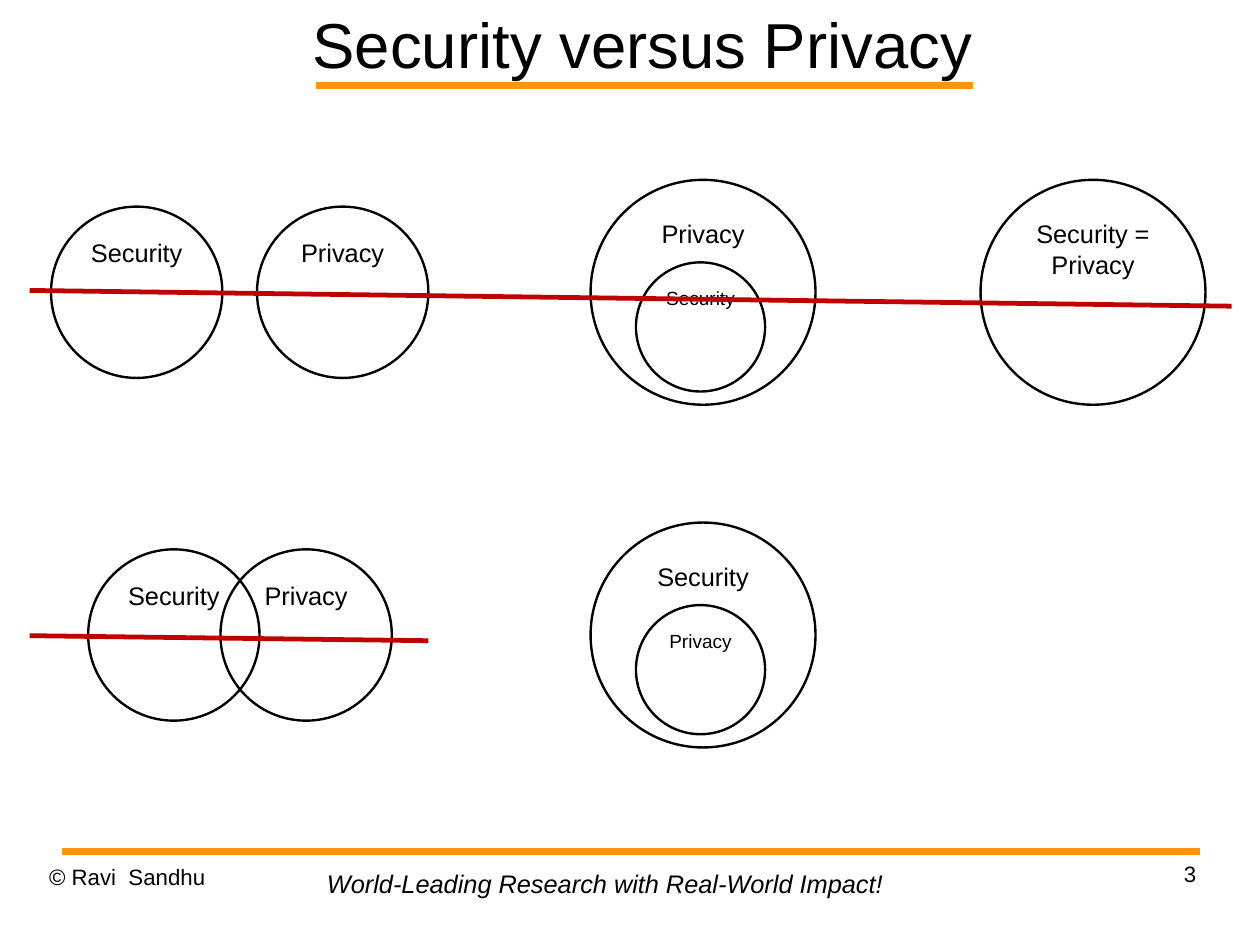
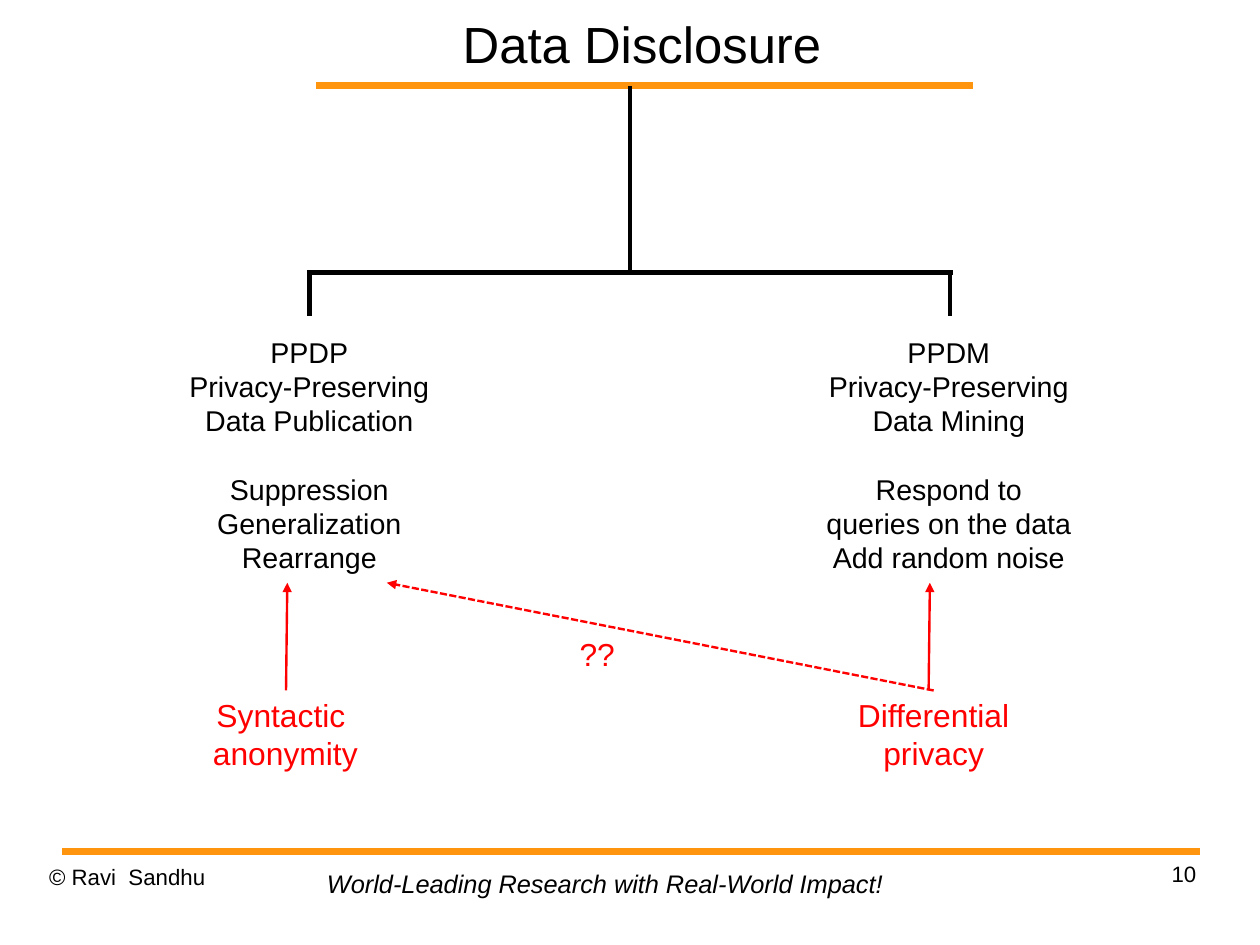
from lxml import etree
from pptx import Presentation
from pptx import util as u
from pptx.dml.color import RGBColor
from pptx.enum import dml, shapes, text
from pptx.oxml.ns import qn

WIDTH, HEIGHT = u.Cm(28), u.Cm(21)
UNIT = WIDTH / 100
BLACK, ORANGE, RED, CRIMSON = "000000", "FF950E", "FF0000", "C00000"
TITLE_RULE, FOOTER_RULE = 6.8, 67.55
SMALL, MEDIUM, LARGE = 10.25, 13.6, 17.85
LEFT, CENTER, RIGHT = text.PP_ALIGN.LEFT, text.PP_ALIGN.CENTER, text.PP_ALIGN.RIGHT
TOP, MIDDLE = text.MSO_ANCHOR.TOP, text.MSO_ANCHOR.MIDDLE


def grid(*cells):
    """Turn grid units, a hundred to the slide's width, into lengths."""
    return [u.Emu(round(cell * UNIT)) for cell in cells]


def color(value):
    """Turn a hex string into a colour."""
    return RGBColor.from_string(value)


def assign(target, values):
    """Set each named value on the target."""
    for name, value in values.items():
        setattr(target, name, value)


def write(tf, groups, size, hue=BLACK, align=CENTER, spacing=1.0, italic=False):
    """Write groups of lines, with one line's gap between groups."""
    lines = [(line, i > 0 and j == 0) for i, group in enumerate(groups)
             for j, line in enumerate(group)]
    for i, (line, gap) in enumerate(lines):
        p = tf.paragraphs[0] if i == 0 else tf.add_paragraph()
        assign(p, {"alignment": align, "line_spacing": spacing})
        if gap:
            p.space_before = u.Pt(size * 1.2)
        r = p.add_run()
        r.text = line
        assign(r.font, {"name": "Arial", "size": u.Pt(size), "italic": italic})
        r.font.color.rgb = color(hue)


def label(s, box, groups, size, anchor=TOP, **style):
    """Add a text box without margins."""
    tf = s.shapes.add_textbox(*grid(*box)).text_frame
    assign(tf, {"word_wrap": True, "vertical_anchor": anchor, "margin_left": 0,
                "margin_right": 0, "margin_top": 0, "margin_bottom": 0})
    write(tf, groups, size, **style)


def column(s, center, top, width, groups, size, hue=BLACK):
    """Add text centred on a column."""
    rows = sum(len(group) for group in groups) + len(groups) - 1
    label(s, (center - width / 2, top, width, rows * size * 0.15), groups, size, hue=hue)


def line(s, start, end, hue, width, arrow=False, dash=None):
    """Draw a straight line, with an arrowhead or dashes if asked."""
    sp = s.shapes.add_connector(shapes.MSO_CONNECTOR.STRAIGHT, *grid(*start, *end))
    sp.line.color.rgb = color(hue)
    assign(sp.line, {"width": u.Pt(width), "dash_style": dash})
    if arrow:
        etree.SubElement(sp.line._get_or_add_ln(), qn("a:tailEnd"), type="triangle")
    etree.SubElement(sp._element.spPr, qn("a:effectLst"))


def circle(s, x, y, size, *lines, points=16):
    """Draw an open circle about a centre, with its name near the top."""
    sp = s.shapes.add_shape(shapes.MSO_SHAPE.OVAL,
                            *grid(x - size / 2, y - size / 2, size, size))
    sp.shadow.inherit = False
    sp.fill.background()
    sp.line.color.rgb = color(BLACK)
    sp.line.width = u.Pt(1.5)
    assign(sp.text_frame, {"word_wrap": False, "vertical_anchor": TOP})
    write(sp.text_frame, [lines], points)


def nested(s, y, outer, inner):
    """Draw one circle within another."""
    circle(s, 55.6, y + 2.75, SMALL, inner, points=12)
    circle(s, 55.8, y, LARGE, outer)


def pair(s, y, left, right):
    """Draw the two medium circles side by side."""
    circle(s, left, y, MEDIUM, "Security")
    circle(s, right, y, MEDIUM, "Privacy")


def framed_slide(prs, title, size, number):
    """Add a slide with the shared rules, title and footer."""
    s = prs.slides.add_slide(prs.slide_layouts[6])
    line(s, (25.05, TITLE_RULE), (77.2, TITLE_RULE), ORANGE, 4.31)
    line(s, (4.95, FOOTER_RULE), (95.2, FOOTER_RULE), ORANGE, 4.31)
    label(s, (3.9, 68.5, 23.3, 5.2), [["© Ravi  Sandhu"]], 14, align=LEFT, spacing=1.01)
    label(s, (71.65, 68.3, 23.3, 5.2), [[number]], 14, align=RIGHT, spacing=1.01)
    label(s, (25.95, 68.9, 46, 2.5), [["World-Leading Research with Real-World Impact!"]],
          16, align=LEFT, italic=True)
    label(s, (21.8, 0, 58.35, TITLE_RULE), [[title]], size, anchor=MIDDLE)
    return s


def security_slide(prs):
    """Build the circles that relate security to privacy."""
    s = framed_slide(prs, "Security versus Privacy", 40, "3")
    upper, lower = 23.2, 50.4
    pair(s, upper, 10.85, 27.2)
    nested(s, upper, "Privacy", "Security")
    circle(s, 86.75, upper, LARGE, "Security =", "Privacy")
    pair(s, lower, 13.8, 24.3)
    nested(s, lower, "Security", "Privacy")
    line(s, (2.35, 23.05), (97.75, 24.3), CRIMSON, 3)
    line(s, (2.35, 50.45), (34, 50.85), CRIMSON, 3)


def disclosure_slide(prs):
    """Build the tree of data disclosure."""
    s = framed_slide(prs, "Data Disclosure", 32, "10")
    middle, left, right, bar = 50, 24.55, 75.4, 21.65
    line(s, (middle, TITLE_RULE), (middle, bar), BLACK, 3)
    line(s, (left - 0.2, bar), (right + 0.2, bar), BLACK, 3)
    for x in (left, right):
        line(s, (x, bar), (x, 25.1), BLACK, 3)
    column(s, left, 26.55, 21, [["PPDP", "Privacy-Preserving", "Data Publication"],
                                ["Suppression", "Generalization", "Rearrange"]], 18)
    column(s, right - 0.1, 26.55, 21,
           [["PPDM", "Privacy-Preserving", "Data Mining"],
            ["Respond to", "queries on the data", "Add random noise"]], 18)
    column(s, 22.65, 55.25, 14, [["Syntactic ", "anonymity"]], 20, RED)
    column(s, 74.1, 55.25, 14, [["Differential", "privacy"]], 20, RED)
    low, high = 54.8, 46.25
    for x in (22.7, 73.7):
        line(s, (x, low), (x + 0.1, high), RED, 1.5, arrow=True)
    line(s, (74.1, low), (30.7, high), RED, 1.5, arrow=True,
         dash=dml.MSO_LINE.SQUARE_DOT)
    column(s, 47.4, 50.4, 5, [["??"]], 20, RED)


def main():
    """Build and save the presentation."""
    prs = Presentation()
    assign(prs, {"slide_width": WIDTH, "slide_height": HEIGHT})
    security_slide(prs)
    disclosure_slide(prs)
    prs.save("out.pptx")


if __name__ == "__main__":
    main()
